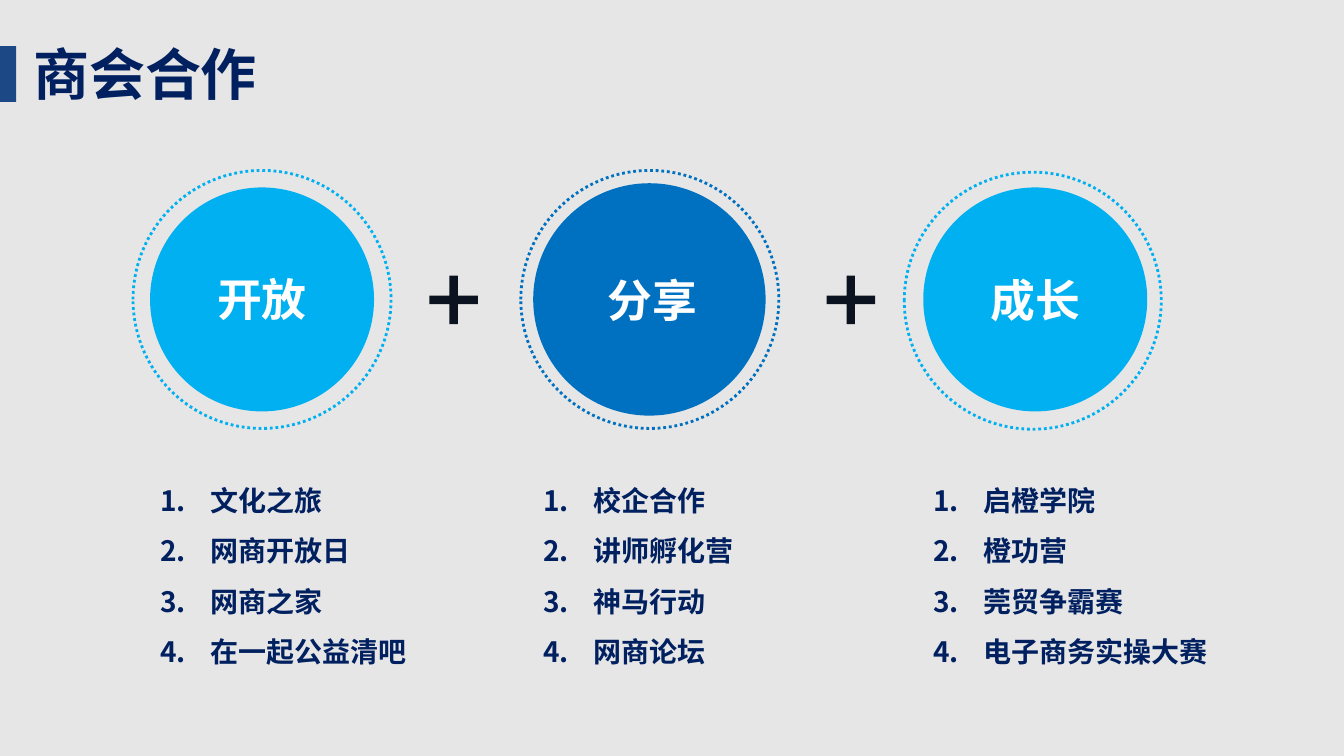
from lxml import etree
from pptx import Presentation
from pptx.dml.color import RGBColor
from pptx.enum import dml, shapes, text
from pptx.oxml import ns
from pptx.util import Pt

FONT = "Noto Sans CJK SC"
GREY = RGBColor(0xE7, 0xE6, 0xE6)
NAVY = RGBColor(0x00, 0x20, 0x60)
STEEL = RGBColor(0x1C, 0x48, 0x85)
SKY = RGBColor(0x00, 0xB0, 0xF0)
BLUE = RGBColor(0x00, 0x70, 0xC0)
INK = RGBColor(0x0A, 0x13, 0x1F)
WHITE = RGBColor(0xFF, 0xFF, 0xFF)

MIDDLE = 214.2
PLUS_SIZE = 34.6
PLUS_BAR = 6
PLUS_CENTERS = (324, 607.7)
PILLARS = (
    {"name": "开放", "color": SKY, "disc": (187.2, 213.9, 160), "ring": (187.2, 213.9, 184.3),
     "label": (187.2, 189.4), "list": (107.3, 195),
     "items": ("文化之旅", "网商开放日", "网商之家", "在一起公益清吧")},
    {"name": "分享", "color": BLUE, "disc": (463.9, 213.9, 166), "ring": (464.2, 213.9, 184.3),
     "label": (465.8, 190.1), "list": (380.9, 218),
     "items": ("校企合作", "讲师孵化营", "神马行动", "网商论坛")},
    {"name": "成长", "color": SKY, "disc": (739.5, 213.9, 160), "ring": (737.7, 214.8, 183.6),
     "label": (739.5, 190.1), "list": (659.5, 217),
     "items": ("启橙学院", "橙功营", "莞贸争霸赛", "电子商务实操大赛")},
)


def paint(shape, color):
    """Fill a shape with one colour, without line or shadow."""
    shape.shadow.inherit = False
    shape.fill.solid()
    shape.fill.fore_color.rgb = color
    shape.line.fill.background()


def add_circle(page, center_x, center_y, size):
    """Add a circle around a centre."""
    return page.shapes.add_shape(
        shapes.MSO_SHAPE.OVAL, Pt(center_x - size / 2), Pt(center_y - size / 2), Pt(size), Pt(size))


def add_ring(page, circle, color):
    """Add a dotted, unfilled circle."""
    ring = add_circle(page, *circle)
    ring.shadow.inherit = False
    ring.fill.background()
    ring.line.color.rgb = color
    ring.line.width = Pt(2)
    ring.line.dash_style = dml.MSO_LINE.ROUND_DOT


def add_text(page, area, lines, size, color, margins=(7.2, 3.6), align=text.PP_ALIGN.LEFT):
    """Add a bold text box with one paragraph per line and return its paragraphs."""
    box = page.shapes.add_textbox(*(Pt(length) for length in area))
    frame = box.text_frame
    side, edge = (Pt(margin) for margin in margins)
    layout = {"word_wrap": True, "auto_size": text.MSO_AUTO_SIZE.SHAPE_TO_FIT_TEXT,
              "margin_left": side, "margin_right": side, "margin_top": edge, "margin_bottom": edge}
    for name, value in layout.items():
        setattr(frame, name, value)
    for index, line in enumerate(lines):
        para = frame.add_paragraph() if index else frame.paragraphs[0]
        para.alignment = align
        span = para.add_run()
        span.text = line
        for name, value in {"name": FONT, "size": Pt(size), "bold": True}.items():
            setattr(span.font, name, value)
        span.font.color.rgb = color
        east_asian = etree.SubElement(span._r.get_or_add_rPr(), ns.qn("a:ea"))
        east_asian.set("typeface", FONT)
    return frame.paragraphs


def add_numbered_list(page, left, width, items):
    """Add an automatically numbered list."""
    for para in add_text(page, (left, 329.8, width, 152.6), items, 20, NAVY):
        para.line_spacing = 1.5
        properties = para._p.get_or_add_pPr()
        properties.set("marL", str(Pt(36)))
        properties.set("indent", str(-Pt(36)))
        etree.SubElement(properties, ns.qn("a:buFont")).set("typeface", "+mj-lt")
        etree.SubElement(properties, ns.qn("a:buAutoNum")).set("type", "arabicPeriod")


def add_plus(page, center_x):
    """Add a plus sign as one closed outline."""
    arm, bar = PLUS_SIZE / 2, PLUS_BAR / 2
    quarter = ((-bar, arm), (-bar, bar), (-arm, bar))
    half = quarter + tuple((x, -y) for x, y in reversed(quarter))
    outline = half + tuple((-x, -y) for x, y in half)
    points = [(Pt(center_x + x), Pt(MIDDLE + y)) for x, y in outline]
    builder = page.shapes.build_freeform(*points[0])
    builder.add_line_segments(points[1:], close=True)
    paint(builder.convert_to_shape(), INK)


def add_pillar(page, pillar):
    """Add a disc with its ring, name and list."""
    paint(add_circle(page, *pillar["disc"]), pillar["color"])
    add_ring(page, pillar["ring"], pillar["color"])
    center_x, top = pillar["label"]
    add_text(page, (center_x - 80, top, 160, 49), [pillar["name"]], 32, WHITE,
             (10, 5), text.PP_ALIGN.CENTER)
    add_numbered_list(page, *pillar["list"], pillar["items"])


def main():
    """Build and save the slide."""
    deck = Presentation()
    deck.slide_width, deck.slide_height = Pt(960), Pt(540)
    page = deck.slides.add_slide(deck.slide_layouts[6])
    page.background.fill.solid()
    page.background.fill.fore_color.rgb = GREY
    add_text(page, (16.6, 24.5, 768, 55.4), ["商会合作"], 40, NAVY)
    marker = page.shapes.add_shape(shapes.MSO_SHAPE.RECTANGLE, 0, Pt(33), Pt(11.5), Pt(39.8))
    paint(marker, STEEL)
    for pillar in PILLARS:
        add_pillar(page, pillar)
    for center_x in PLUS_CENTERS:
        add_plus(page, center_x)
    deck.save("out.pptx")


if __name__ == "__main__":
    main()
